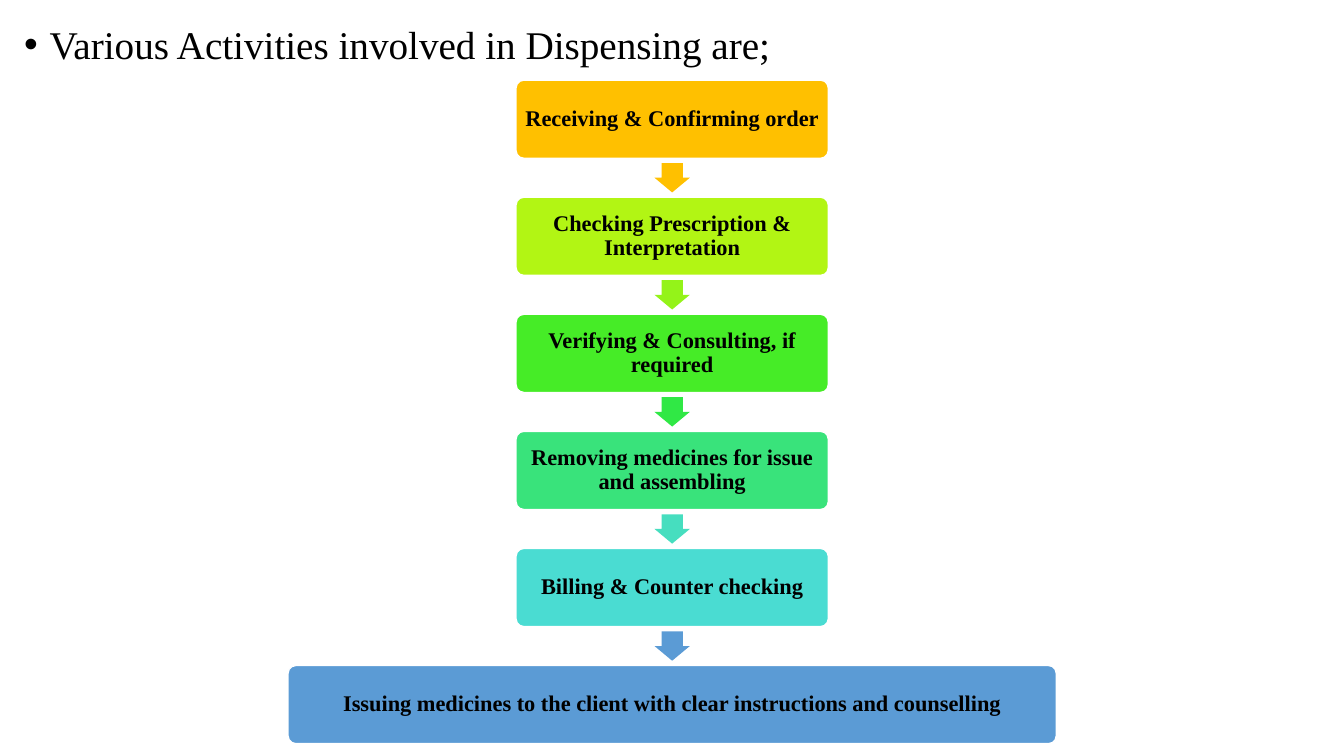
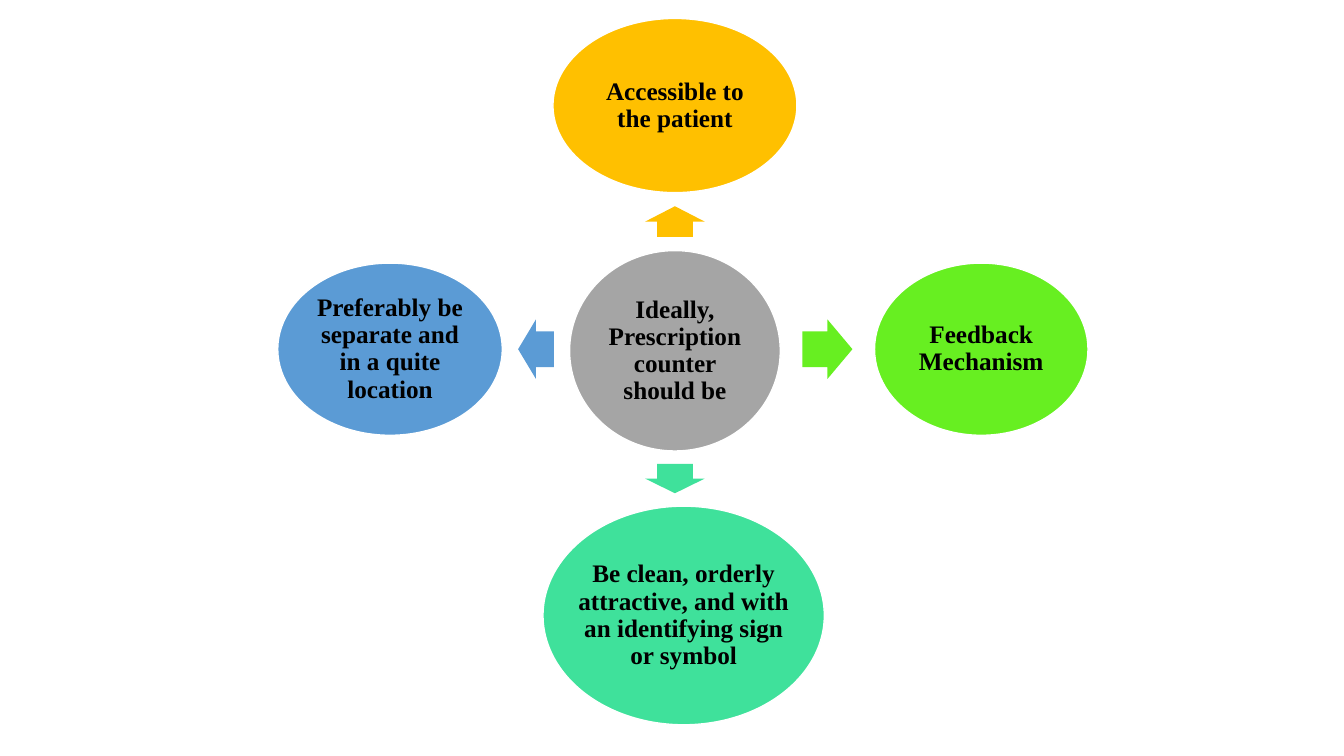
from dataclasses import dataclass

from lxml.etree import SubElement
from pptx import Presentation
from pptx.dml.color import RGBColor
from pptx.enum.shapes import MSO_SHAPE
from pptx.enum.text import MSO_ANCHOR, PP_ALIGN
from pptx.oxml.ns import qn
from pptx.util import Cm, Pt

FONT = "Times New Roman"
COLORS = {
    "text": "000000", "outline": "FFFFFF", "hub": "A5A5A5",
    "amber": "FFC000", "lime": "B2F514", "lime_arrow": "94F319",
    "green": "46EC27", "green_arrow": "30E845", "emerald": "39E37B",
    "emerald_arrow": "46DEBF", "turquoise": "4ADCD2", "blue": "5B9BD5",
    "leaf": "67EF21", "mint": "3FE19B",
}
STEPS = [
    ("Receiving & Confirming order", "amber", "amber"),
    ("Checking Prescription & Interpretation", "lime", "lime_arrow"),
    ("Verifying & Consulting, if required", "green", "green_arrow"),
    ("Removing medicines for issue and assembling", "emerald", "emerald_arrow"),
    ("Billing & Counter checking", "turquoise", "blue"),
    ("Issuing medicines to the client with clear instructions and counselling",
     "blue", None),
]


@dataclass
class Box:
    """A rectangle in centimetres, given by its centre and size."""
    x: float
    y: float
    width: float
    height: float

    @property
    def frame(self):
        """Return left, top, width and height as lengths."""
        return (Cm(self.x - self.width / 2), Cm(self.y - self.height / 2),
                Cm(self.width), Cm(self.height))


HUB = Box(17.01, 8.84, 5.31, 5.05)
SPOKES = [
    ("Accessible to the patient", "amber", Box(0, -6.18, 6.15, 4.39), (0, -1)),
    ("Feedback Mechanism", "leaf", Box(7.72, -0.04, 5.38, 4.34), (1, 0)),
    ("Be clean, orderly\vattractive, and with\van identifying sign\vor symbol",
     "mint", Box(0.22, 6.67, 7.09, 5.51), (0, 1)),
    ("Preferably be separate and in a quite location", "blue",
     Box(-7.18, -0.04, 5.66, 4.34), (-1, 0)),
]
ARROWS = {(0, -1): MSO_SHAPE.UP_ARROW, (1, 0): MSO_SHAPE.RIGHT_ARROW,
          (0, 1): MSO_SHAPE.DOWN_ARROW, (-1, 0): MSO_SHAPE.LEFT_ARROW}


def write(holder, text, size=16, bold=True, align=PP_ALIGN.CENTER,
          anchor=MSO_ANCHOR.MIDDLE, inset=(0.15, 0.15), wrap=True):
    """Fill a shape with one formatted paragraph and return the paragraph."""
    frame = holder.text_frame
    frame.word_wrap = wrap
    frame.vertical_anchor = anchor
    frame.margin_left = frame.margin_right = Cm(inset[0])
    frame.margin_top = frame.margin_bottom = Cm(inset[1])
    paragraph = frame.paragraphs[0]
    paragraph.text = text
    paragraph.alignment = align
    paragraph.line_spacing = 0.9
    for run in paragraph.runs:
        run.font.name = FONT
        run.font.size = Pt(size)
        run.font.bold = bold
        run.font.color.rgb = RGBColor.from_string(COLORS["text"])
    return paragraph


def add_figure(slide, preset, box, color, outlined=True, adjustments=()):
    """Add a flat filled preset shape, outlined on request."""
    figure = slide.shapes.add_shape(preset, *box.frame)
    figure.shadow.inherit = False
    figure.fill.solid()
    figure.fill.fore_color.rgb = RGBColor.from_string(COLORS[color])
    if outlined:
        figure.line.color.rgb = RGBColor.from_string(COLORS["outline"])
        figure.line.width = Pt(1)
    else:
        figure.line.fill.background()
    for index, value in enumerate(adjustments):
        figure.adjustments[index] = value
    return figure


def add_arrow(slide, direction, box, color):
    """Add a block arrow pointing in the given direction."""
    add_figure(slide, ARROWS[direction], box, color, False, (0.6, 0.5))


def add_heading(slide, box, text):
    """Add the bulleted heading line."""
    heading = slide.shapes.add_textbox(*box.frame)
    paragraph = write(heading, text, size=28, bold=False, align=PP_ALIGN.LEFT,
                      anchor=MSO_ANCHOR.TOP, inset=(0.25, 0.13))
    properties = paragraph._p.get_or_add_pPr()
    properties.set("marL", str(Cm(0.64)))
    properties.set("indent", str(-Cm(0.64)))
    SubElement(properties, qn("a:buFont")).set("typeface", "Arial")
    SubElement(properties, qn("a:buChar")).set("char", "•")


def add_step_flow(slide, box, step_height=1.97, step_width=7.87):
    """Stack the steps evenly in the box, the last one at full width."""
    pitch = (box.height - step_height) / (len(STEPS) - 1)
    first = box.y - box.height / 2 + step_height / 2
    for index, (text, color, arrow_color) in enumerate(STEPS):
        y = first + index * pitch
        width = step_width if arrow_color else box.width
        step = add_figure(slide, MSO_SHAPE.ROUNDED_RECTANGLE,
                          Box(box.x, y, width, step_height), color,
                          adjustments=(0.1,))
        write(step, text)
        if arrow_color:
            add_arrow(slide, (0, 1), Box(box.x, y + pitch / 2, 0.89, 0.74),
                      arrow_color)


def add_oval(slide, box, text, color):
    """Add an oval with its label, keeping any set line breaks."""
    oval = add_figure(slide, MSO_SHAPE.OVAL, box, color)
    write(oval, text, size=18, inset=(0.05, 0.05), wrap="\v" not in text)


def add_spoke(slide, hub, text, color, offset, direction):
    """Add an oval around the hub and an arrow centred in the gap to it."""
    spoke = Box(hub.x + offset.x, hub.y + offset.y, offset.width, offset.height)
    across, down = direction
    if across:
        gap = abs(offset.x) - (hub.width + spoke.width) / 2
        reach = hub.width / 2 + gap / 2
        arrow = Box(hub.x + across * reach, spoke.y, gap * 0.53, 1.5)
    else:
        gap = abs(offset.y) - (hub.height + spoke.height) / 2
        reach = hub.height / 2 + gap / 2
        arrow = Box(hub.x, hub.y + down * reach, 1.5, gap * 0.53)
    add_arrow(slide, direction, arrow, color)
    add_oval(slide, spoke, text, color)


def add_hub_and_spokes(slide, hub):
    """Place the central oval and everything around it."""
    add_oval(slide, hub, "Ideally, Prescription counter should be", "hub")
    for spoke in SPOKES:
        add_spoke(slide, hub, *spoke)


def main():
    """Build both slides and save the presentation."""
    deck = Presentation()
    deck.slide_width, deck.slide_height = Cm(33.87), Cm(19.05)
    blank = deck.slide_layouts[6]
    activities = deck.slides.add_slide(blank)
    add_heading(activities, Box(16.97, 1.21, 33.22, 1.4),
                "Various Activities involved in Dispensing are;")
    add_step_flow(activities, Box(16.94, 10.38, 19.36, 16.72))
    add_hub_and_spokes(deck.slides.add_slide(blank), HUB)
    deck.save("out.pptx")


if __name__ == "__main__":
    main()
